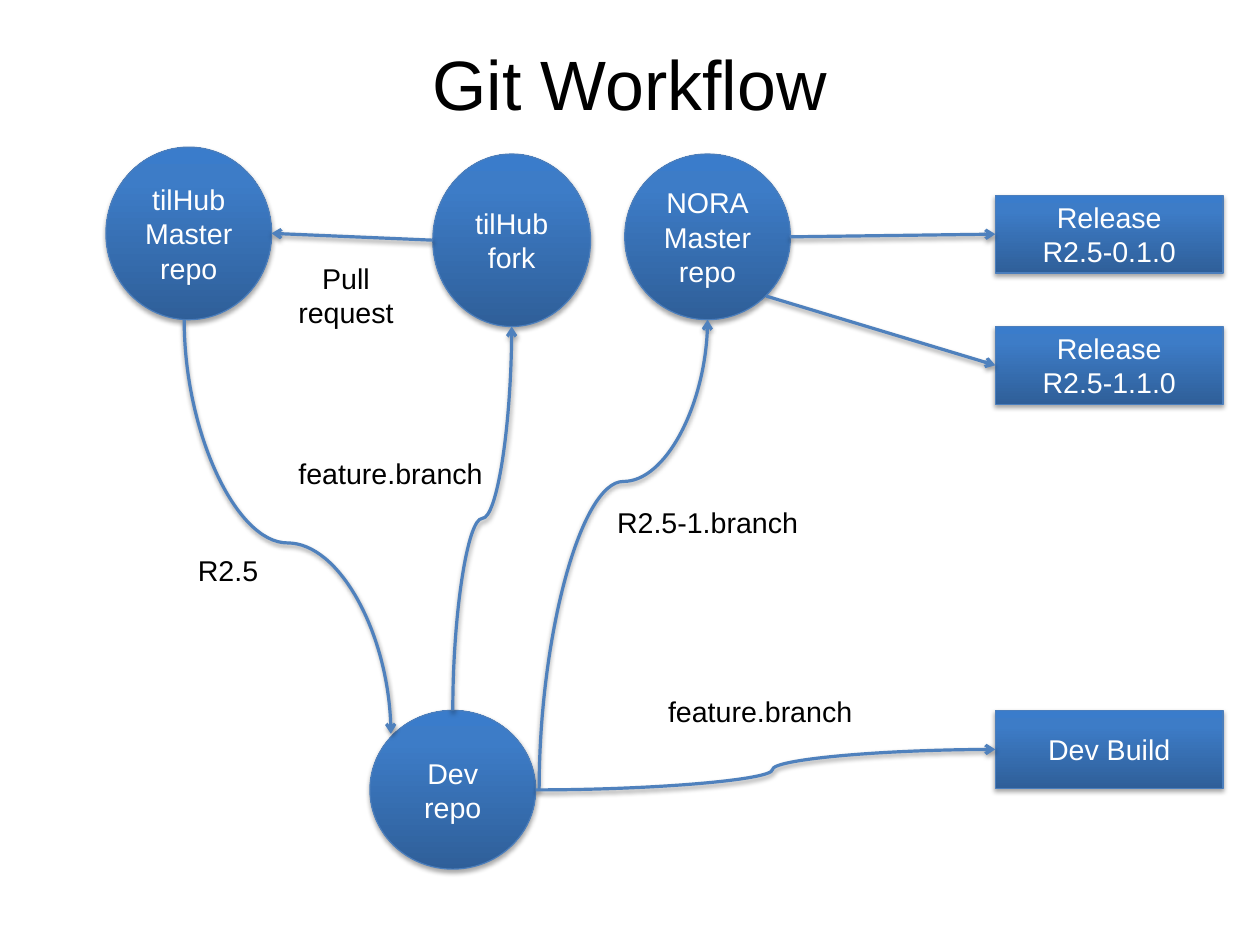
from copy import deepcopy
from lxml.etree import SubElement as Sub
from pptx import Presentation
from pptx.dml.color import RGBColor
from pptx.enum.shapes import MSO_CONNECTOR as Link, MSO_SHAPE as Form
from pptx.enum.text import MSO_ANCHOR as Anchor, PP_ALIGN as Align
from pptx.oxml.ns import qn
from pptx.util import Pt


def paint(part, color):
    part.rgb = RGBColor.from_string(color)


def write(shape, text, size, color):
    frame = shape.text_frame
    frame.vertical_anchor = Anchor.MIDDLE
    for i, line in enumerate(text.split("\n")):
        para = frame.add_paragraph() if i else frame.paragraphs[0]
        para.alignment = Align.CENTER
        run = para.add_run()
        run.text = line
        run.font.size = Pt(size)
        run.font.name = "Arial"
        paint(run.font.color, color)


deck = Presentation()
deck.slide_width, deck.slide_height = Pt(793.7), Pt(595.28)
slide = deck.slides.add_slide(deck.slide_layouts[6])
items = slide.shapes

title = items.add_textbox(Pt(39.6), Pt(23.4), Pt(714.2), Pt(56.9))
frame = title.text_frame
frame.word_wrap = True
frame.margin_left = frame.margin_right = frame.margin_top = frame.margin_bottom = 0
write(title, "Git Workflow", 44, "000000")

nodes = {}
glows = []
for text, form, x, y, w, h in [
    ("tilHub\nMaster\nrepo", Form.OVAL, 66.7, 92.7, 104.4, 108.7),
    ("Dev\nrepo", Form.OVAL, 233, 447.5, 104.4, 100),
    ("NORA\nMaster\nrepo", Form.OVAL, 393.5, 97, 104.4, 104.4),
    ("tilHub\nfork", Form.OVAL, 272.6, 97, 99.4, 108.7),
    ("Release\nR2.5-0.1.0", Form.RECTANGLE, 627, 123, 143.5, 49),
    ("Release\nR2.5-1.1.0", Form.RECTANGLE, 627, 205.6, 143.5, 49),
    ("Dev Build", Form.RECTANGLE, 627, 447.5, 143.5, 49),
]:
    node = items.add_shape(form, Pt(x), Pt(y), Pt(w), Pt(h))
    fill = node.fill
    fill.gradient()
    fill.gradient_angle = 90
    props = node._element.spPr
    stops = props.find(qn("a:gradFill")).find(qn("a:gsLst"))
    stops.append(deepcopy(stops[-1]))
    for stop, (spot, color) in zip(
            fill.gradient_stops, [(0, "2F5F99"), (0.8, "3D7CC7"), (1, "3A7CCB")]):
        stop.position = spot
        paint(stop.color, color)
    paint(node.line.color, "4B7EBC")
    node.line.width = Pt(0.75)
    node.shadow.inherit = False
    glows.append((props.find(qn("a:effectLst")), 35, 1.8))
    write(node, text, 18, "FFFFFF")
    nodes[text] = node

for x1, y1, x2, y2, turn, bend, goal in [
    (497.5, 149.2, 627, 147.5, 0, None, "Release\nR2.5-0.1.0"),
    (482.6, 186.5, 627, 230.1, 0, None, "Release\nR2.5-1.1.0"),
    (272.6, 151.3, 171, 147, 0, None, None),
    (116, 201.5, 246.2, 462.2, 270, 0.539, None),
    (285.2, 447.5, 322.3, 205.7, 90, 0.5, None),
    (339.6, 497.6, 445.7, 201.4, 90, 0.656, None),
    (337.5, 497.6, 627, 472.1, 0, 0.515, None),
]:
    if turn:
        midx, midy = (x1 + x2) / 2, (y1 + y2) / 2
        w, h = abs(y2 - y1) / 2, (x2 - x1) / 2
        if turn == 270:
            h = -h
        x1, y1, x2, y2 = midx + w, midy + h, midx - w, midy - h
    kind = Link.CURVE if bend else Link.STRAIGHT
    arrow = items.add_connector(kind, Pt(x1), Pt(y1), Pt(x2), Pt(y2))
    if goal:
        arrow.end_connect(nodes[goal], 1)
    props = arrow._element.spPr
    if turn:
        props.find(qn("a:xfrm")).set("rot", str(turn * 60000))
    if bend:
        geom = props.find(qn("a:prstGeom"))
        Sub(geom.find(qn("a:avLst")), qn("a:gd"), name="adj1",
            fmla=f"val {round(bend * 100000)}")
    paint(arrow.line.color, "4F81BD")
    arrow.line.width = Pt(2)
    Sub(props.find(qn("a:ln")), qn("a:tailEnd"), type="arrow")
    glows.append((Sub(props, qn("a:effectLst")), 38, 1.6))

for glow, alpha, dist in glows:
    drop = Sub(glow, qn("a:outerShdw"), blurRad=str(Pt(3.1)), dist=str(Pt(dist)),
               dir="5400000", rotWithShape="0")
    tint = Sub(drop, qn("a:srgbClr"), val="000000")
    Sub(tint, qn("a:alpha"), val=str(alpha * 1000))

for text, x, y, w, h in [
    ("R2.5", 117, 344.6, 53.3, 29),
    ("feature.branch", 176.2, 283.4, 139.7, 29),
    ("R2.5-1.branch", 381.6, 314.2, 128.2, 29),
    ("Pull\nrequest", 176.2, 160.3, 83.5, 51),
    ("feature.branch", 409, 433.4, 139.7, 29),
]:
    label = items.add_textbox(Pt(x), Pt(y), Pt(w), Pt(h))
    label.text_frame.word_wrap = False
    write(label, text, 18, "000000")

deck.save("out.pptx")
